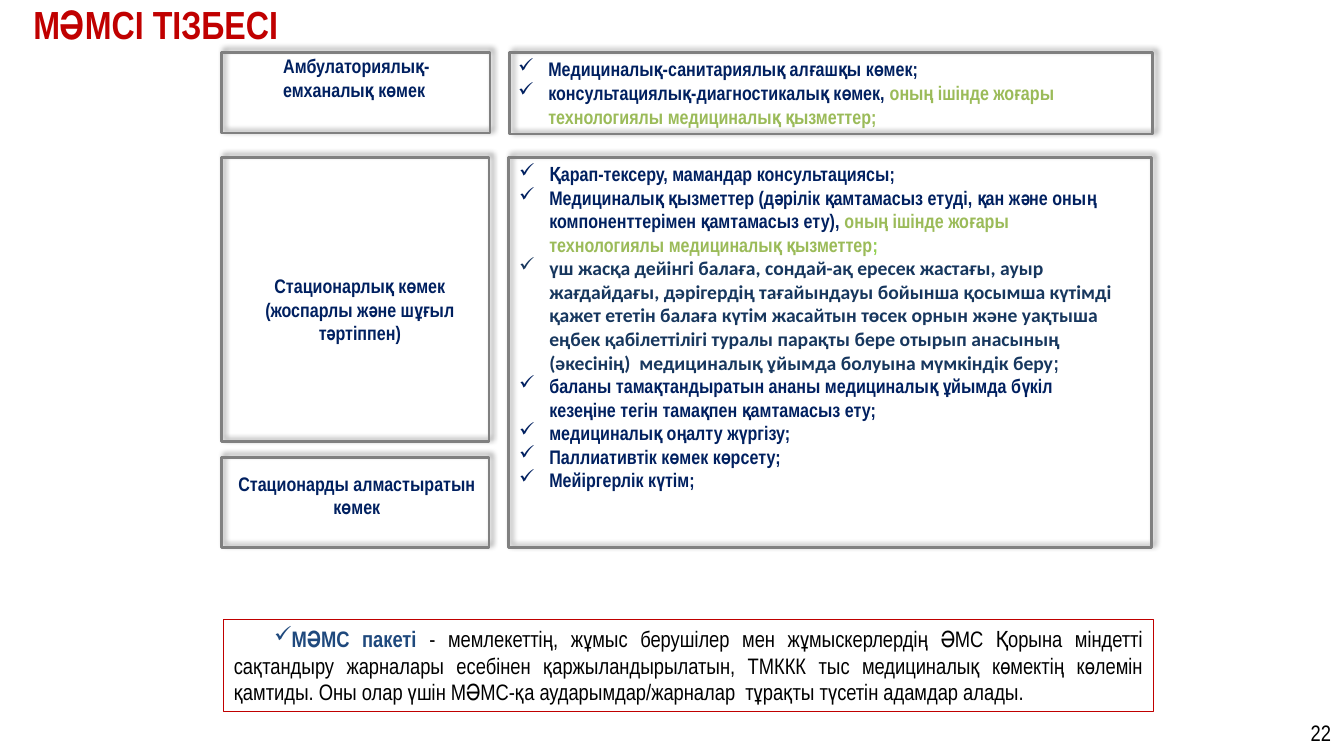
from dataclasses import dataclass

from lxml.etree import SubElement
from pptx import Presentation
from pptx.dml.color import RGBColor
from pptx.enum.shapes import MSO_SHAPE
from pptx.enum.text import MSO_ANCHOR, MSO_AUTO_SIZE, PP_ALIGN
from pptx.oxml.ns import qn
from pptx.util import Inches, Pt


@dataclass(frozen=True)
class Theme:
    """Colours, fonts and type sizes of the slide."""
    navy: str = "002060"
    green: str = "9BBB59"
    lime: str = "92D050"
    slate: str = "17375E"
    blue: str = "1F497D"
    red: str = "C00000"
    gray: str = "808080"
    black: str = "000000"
    narrow: str = "Arial Narrow"
    calibri: str = "Calibri"
    title: int = 28
    note: int = 16
    body: int = 14


THEME = Theme()
TITLE = "МӘМСІ ТІЗБЕСІ"
PAGE_NUMBER = "22"
LABELS = [
    ("Амбулаториялық-емханалық көмек ", (2.29, 0.49, 2.49, 0.57)),
    ("Стационарлық көмек (жоспарлы және шұғыл тәртіппен)", (2.29, 2.67, 2.56, 0.8)),
    ("Стационарды алмастыратын көмек", (2.24, 4.63, 2.6, 0.56)),
]
OUTPATIENT = [
    [("Медициналық-санитариялық алғашқы көмек;", THEME.navy)],
    [("консультациялық-диагностикалық көмек, ", THEME.navy),
     ("оның ішінде жоғары технологиялы медициналық қызметтер;", THEME.green)],
]
INPATIENT = [
    [("Қарап-тексеру, мамандар консультациясы;", THEME.navy)],
    [("Медициналық қызметтер (дәрілік қамтамасыз етуді, қан және оның компоненттерімен "
      "қамтамасыз ету), ", THEME.navy),
     ("оның ішінде жоғары технологиялы медициналық қызметтер", THEME.green),
     (";", THEME.lime)],
    [("үш жасқа дейінгі балаға, сондай-ақ ересек жастағы, ауыр жағдайдағы, дәрігердің "
      "тағайындауы бойынша қосымша күтімді қажет ететін балаға күтім жасайтын төсек орнын "
      "және уақтыша еңбек қабілеттілігі туралы парақты бере отырып анасының (әкесінің)  "
      "медициналық ұйымда болуына мүмкіндік беру", THEME.slate, THEME.calibri),
     (";", THEME.slate)],
    [("баланы тамақтандыратын ананы медициналық ұйымда бүкіл кезеңіне тегін тамақпен "
      "қамтамасыз ету;", THEME.navy)],
    [("медициналық оңалту жүргізу;", THEME.navy)],
    [("Паллиативтік көмек көрсету;", THEME.navy)],
    [("Мейіргерлік күтім;", THEME.navy)],
]
LISTS = [(OUTPATIENT, (5.04, 0.52, 5.84, 0.8)), (INPATIENT, (5.05, 1.56, 6.19, 3.4))]
NOTE_LEAD = "МӘМС пакеті "
NOTE_REST = (
    "- мемлекеттің, жұмыс берушілер мен жұмыскерлердің ӘМС Қорына міндетті сақтандыру "
    "жарналары есебінен қаржыландырылатын, ТМККК тыс медициналық көмектің көлемін қамтиды. "
    "Оны олар үшін МӘМС-қа аударымдар/жарналар  тұрақты түсетін адамдар алады."
)
FRAMES = [
    (2.2, 0.52, 2.66, 0.8),
    (5.05, 0.52, 6.38, 0.81),
    (2.2, 1.56, 2.65, 2.82),
    (2.2, 4.54, 2.65, 0.89),
    (5.04, 1.56, 6.38, 3.87),
]


def lengths(place):
    """Turn a place in inches into slide lengths."""
    return [Inches(value) for value in place]


def add_outline(page, place, colour, width):
    """Add an unfilled rectangle."""
    shape = page.shapes.add_shape(MSO_SHAPE.RECTANGLE, *lengths(place))
    shape.shadow.inherit = False
    shape.fill.background()
    shape.line.color.rgb = RGBColor.from_string(colour)
    shape.line.width = Pt(width)
    return shape


def add_frame(page, place):
    """Add a gray frame with a soft shadow."""
    frame = add_outline(page, place, THEME.gray, 2)
    effects = frame._element.spPr.find(qn("a:effectLst"))
    shadow = SubElement(effects, qn("a:outerShdw"), blurRad=str(Pt(4)), dist=str(Pt(3)),
                        dir=str(315 * 60000), algn="bl", rotWithShape="0")
    colour = SubElement(shadow, qn("a:srgbClr"), val=THEME.black)
    SubElement(colour, qn("a:alpha"), val="40000")


def add_box(page, place):
    """Add a wrapping text box and return its text frame."""
    frame = page.shapes.add_textbox(*lengths(place)).text_frame
    frame.word_wrap = True
    return frame


def set_bullet(para, margin, indent):
    """Give a paragraph a check mark and its indents."""
    properties = para._p.get_or_add_pPr()
    properties.set("marL", str(Inches(margin)))
    properties.set("indent", str(Inches(indent)))
    SubElement(properties, qn("a:buChar"), char="✓")


def write(para, spans, size, bold=True, align=PP_ALIGN.LEFT):
    """Write coloured spans into a paragraph."""
    para.alignment = align
    para.font.size = Pt(size)
    para.font.name = THEME.narrow
    para.font.bold = bold
    for text, colour, *font in spans:
        span = para.add_run()
        span.text = text
        span.font.color.rgb = RGBColor.from_string(colour)
        if font:
            span.font.name = font[0]


def add_title(page):
    """Place and format the slide title."""
    title = page.shapes.title
    title.left, title.top, title.width, title.height = lengths((0.23, 0.04, 8.74, 0.48))
    frame = title.text_frame
    frame.auto_size = MSO_AUTO_SIZE.NONE
    frame.vertical_anchor = MSO_ANCHOR.TOP
    para = frame.paragraphs[0]
    para.line_spacing = 0.8
    write(para, [(TITLE, THEME.red)], THEME.title)


def add_list(page, items, place):
    """Add a check-marked list."""
    frame = add_box(page, place)
    for index, spans in enumerate(items):
        para = frame.add_paragraph() if index else frame.paragraphs[0]
        set_bullet(para, 0.3, -0.3)
        write(para, spans, THEME.body)


def add_note(page):
    """Add the red outlined definition."""
    frame = add_outline(page, (2.22, 6.15, 9.22, 0.91), THEME.red, 0.75).text_frame
    frame.word_wrap = True
    frame.vertical_anchor = MSO_ANCHOR.TOP
    para = frame.paragraphs[0]
    set_bullet(para, 0, 0.4)
    para.space_after = Pt(6)
    spans = [(NOTE_LEAD, THEME.blue), (NOTE_REST, THEME.black)]
    write(para, spans, THEME.note, False, PP_ALIGN.JUSTIFY)
    para.runs[0].font.bold = True


def main():
    """Build and save the slide."""
    deck = Presentation()
    deck.slide_width, deck.slide_height = Inches(13.33), Inches(7.5)
    page = deck.slides.add_slide(deck.slide_layouts[5])
    add_title(page)
    for place in FRAMES:
        add_frame(page, place)
    for text, place in LABELS:
        para = add_box(page, place).paragraphs[0]
        write(para, [(text, THEME.navy)], THEME.body, align=PP_ALIGN.CENTER)
    for items, place in LISTS:
        add_list(page, items, place)
    add_note(page)
    number = add_box(page, (10.3, 7.07, 3, 0.4))
    number.vertical_anchor = MSO_ANCHOR.MIDDLE
    write(number.paragraphs[0], [(PAGE_NUMBER, THEME.black)], THEME.note, False, PP_ALIGN.RIGHT)
    deck.save("out.pptx")


if __name__ == "__main__":
    main()
